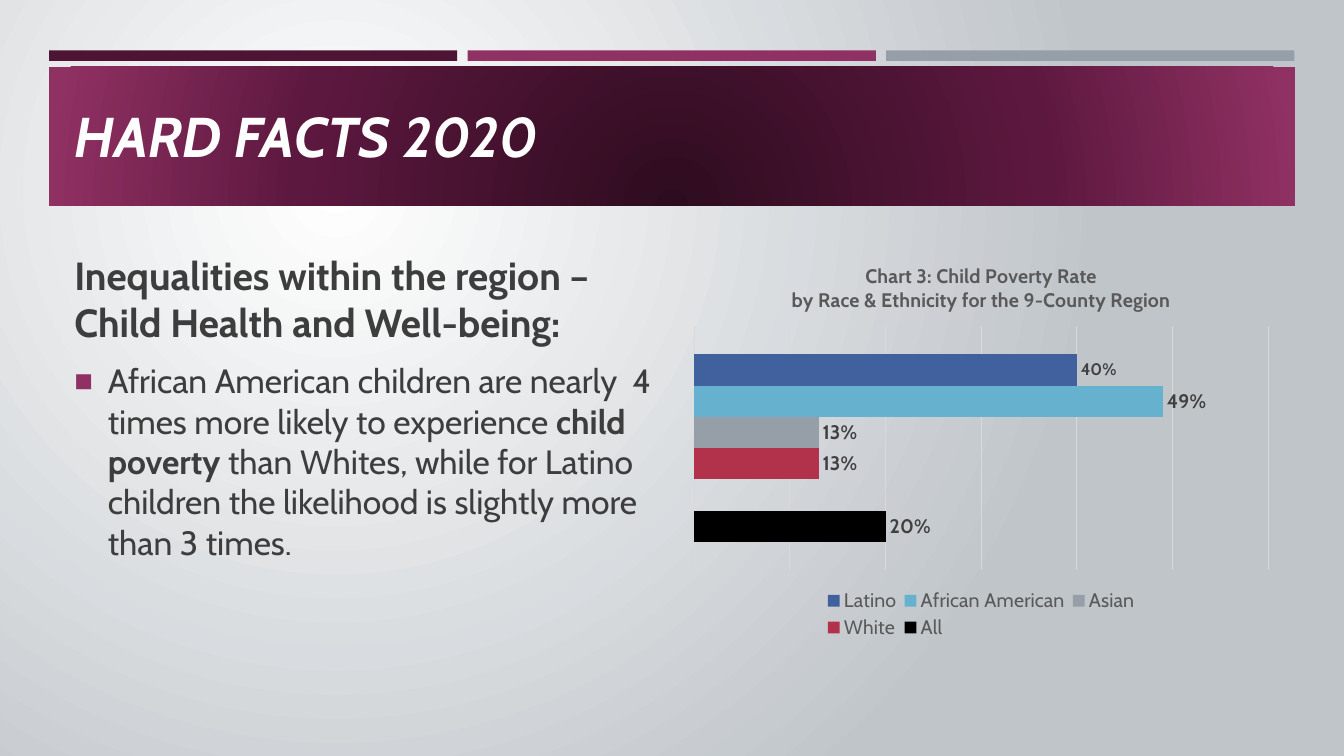
from lxml import etree
from pptx import Presentation
from pptx.chart.data import CategoryChartData
from pptx.dml.color import RGBColor
from pptx.enum.chart import XL_CHART_TYPE, XL_LABEL_POSITION, XL_LEGEND_POSITION
from pptx.enum.shapes import MSO_SHAPE
from pptx.enum.text import MSO_ANCHOR
from pptx.oxml import parse_xml
from pptx.oxml.ns import nsdecls, qn
from pptx.util import Pt

FONT = "Cabin"
BODY_COLOR, CHART_GRAY = "3D3D3D", "595959"
PLUM, DARK_PLUM, GRAY = "903163", "4D1434", "969FA7"

# Series from bottom bar to top bar: name, value, colour, label size
POVERTY_RATES = [
    ("All", 0.20, "000000", 14),
    ("Series 2", None, PLUM, None),
    ("White", 0.13, "B2324B", 14),
    ("Asian", 0.13, GRAY, 14),
    ("African American", 0.49, "66B1CE", 14),
    ("Latino", 0.40, "40619D", 12),
]


def rgb(color):
    return RGBColor.from_string(color)


def set_font(font, size, color, bold=False, italic=False):
    formats = {"name": FONT, "size": Pt(size), "bold": bold, "italic": italic}
    for attribute, value in formats.items():
        setattr(font, attribute, value)
    font.color.rgb = rgb(color)


def set_radial_gradient(fill, owner, stops, focus):
    """Spread the stops in circles around the focus (left, top, right, bottom)."""
    fill.gradient()
    gradient = next(owner.iter(qn("a:gradFill")))
    for child in list(gradient):
        gradient.remove(child)
    stop_list = etree.SubElement(gradient, qn("a:gsLst"))
    for position, color in stops:
        stop = etree.SubElement(stop_list, qn("a:gs"), pos=str(position * 1000))
        etree.SubElement(stop, qn("a:srgbClr"), val=color)
    circle = etree.SubElement(gradient, qn("a:path"), path="circle")
    sides = {side: str(percent * 1000) for side, percent in zip("ltrb", focus)}
    etree.SubElement(circle, qn("a:fillToRect"), **sides)


def add_bar(slide, left, top, width, height, color):
    bar = slide.shapes.add_shape(
        MSO_SHAPE.RECTANGLE, Pt(left), Pt(top), Pt(width), Pt(height))
    bar.shadow.inherit = False
    bar.line.fill.background()
    bar.fill.solid()
    bar.fill.fore_color.rgb = rgb(color)
    return bar


def add_text_frame(slide, left, top, width, height, anchor):
    frame = slide.shapes.add_textbox(
        Pt(left), Pt(top), Pt(width), Pt(height)).text_frame
    frame.word_wrap = True
    frame.vertical_anchor = anchor
    return frame


def add_run(paragraph, text, size, color, **style):
    run = paragraph.add_run()
    run.text = text
    set_font(run.font, size, color, **style)


def set_square_bullet(paragraph, indent):
    properties = paragraph._p.get_or_add_pPr()
    properties.set("marL", str(Pt(indent)))
    properties.set("indent", str(-Pt(indent)))
    bullet_color = etree.SubElement(properties, qn("a:buClr"))
    etree.SubElement(bullet_color, qn("a:srgbClr"), val=PLUM)
    etree.SubElement(properties, qn("a:buSzPct"), val="92000")
    etree.SubElement(properties, qn("a:buFont"), typeface="Arial")
    etree.SubElement(properties, qn("a:buChar"), char="■")


def manual_layout(x, y, w, h, inner=False):
    target = '<c:layoutTarget val="inner"/>' if inner else ""
    return parse_xml(
        f'<c:layout {nsdecls("c")}><c:manualLayout>{target}'
        '<c:xMode val="edge"/><c:yMode val="edge"/>'
        f'<c:x val="{x}"/><c:y val="{y}"/><c:w val="{w}"/><c:h val="{h}"/>'
        '</c:manualLayout></c:layout>')


def add_legend(chart):
    chart.has_legend = True
    chart.legend.position = XL_LEGEND_POSITION.BOTTOM
    chart.legend.include_in_layout = False
    set_font(chart.legend.font, 14, CHART_GRAY)
    legend = chart.legend._element
    for old_layout in legend.findall(qn("c:layout")):
        legend.remove(old_layout)
    # Leave the empty series out of the legend
    hidden_entry = parse_xml(
        f'<c:legendEntry {nsdecls("c")}><c:idx val="4"/>'
        '<c:delete val="1"/></c:legendEntry>')
    position = legend.find(qn("c:legendPos"))
    position.addnext(hidden_entry)
    hidden_entry.addnext(manual_layout(0.23, 0.85, 0.54, 0.14))


def add_poverty_chart(slide, left, top, width, height):
    data = CategoryChartData(number_format="0%")
    data.categories = ["1"]
    for name, rate, _, _ in POVERTY_RATES:
        data.add_series(name, [rate])
    chart = slide.shapes.add_chart(
        XL_CHART_TYPE.BAR_CLUSTERED, Pt(left), Pt(top), Pt(width), Pt(height),
        data).chart
    set_font(chart.font, 10, "000000")

    # Title
    chart.has_title = True
    title = chart.chart_title.text_frame
    lines = ["Chart 3: Child Poverty Rate",
             "by Race & Ethnicity for the 9-County Region"]
    for number, line in enumerate(lines):
        paragraph = title.add_paragraph() if number else title.paragraphs[0]
        add_run(paragraph, line, 14, CHART_GRAY, bold=True)

    # Axes and grid
    chart.category_axis.visible = False
    chart.category_axis.has_major_gridlines = False
    rate_axis = chart.value_axis
    rate_axis.visible = False
    rate_axis.minimum_scale, rate_axis.maximum_scale = 0, 0.6
    rate_axis.major_unit = 0.1
    rate_axis.has_major_gridlines = True
    grid = rate_axis.major_gridlines.format.line
    grid.color.rgb = rgb("D9D9D9")
    grid.width = Pt(0.75)

    # Bars and their labels
    plot = chart.plots[0]
    plot.gap_width, plot.overlap = 182, 0
    plot.vary_by_categories = False
    for series, (_, _, color, label_size) in zip(plot.series, POVERTY_RATES):
        series.format.fill.solid()
        series.format.fill.fore_color.rgb = rgb(color)
        if label_size:
            labels = series.data_labels
            formats = {"show_value": True, "number_format": "0%",
                       "number_format_is_linked": False,
                       "position": XL_LABEL_POSITION.OUTSIDE_END}
            for attribute, value in formats.items():
                setattr(labels, attribute, value)
            set_font(labels.font, label_size, "404040", bold=True)

    add_legend(chart)
    plot_area = next(chart._chartSpace.iter(qn("c:plotArea")))
    for old_layout in plot_area.findall(qn("c:layout")):
        plot_area.remove(old_layout)
    plot_area.insert(0, manual_layout(0.02, 0.2, 0.96, 0.61, inner=True))


def main():
    deck = Presentation()
    deck.slide_width, deck.slide_height = Pt(960), Pt(540)
    slide = deck.slides.add_slide(deck.slide_layouts[6])
    set_radial_gradient(slide.background.fill, slide.element,
                        [(0, "FFFFFF"), (100, "C0C5CA")], (50, 50, 100, 100))

    # Three strips above the banner
    for column, color in enumerate([DARK_PLUM, PLUM, GRAY]):
        add_bar(slide, 35 + column * 299, 36, 291.6, 7.5, color)

    # Title banner
    banner = add_bar(slide, 35, 47.7, 890, 99.4, PLUM)
    set_radial_gradient(banner.fill, banner._element,
                        [(0, "2E0C1F"), (60, "5D183F"), (100, PLUM)],
                        (50, 130, 50, -30))
    heading = add_text_frame(slide, 46, 57.6, 868, 78, MSO_ANCHOR.MIDDLE)
    add_run(heading.paragraphs[0], "HARD FACTS 2020", 40, "FFFFFF",
            bold=True, italic=True)

    # Findings
    findings = add_text_frame(slide, 46, 175.7, 427, 286, MSO_ANCHOR.TOP)
    topic = findings.paragraphs[0]
    topic.space_after = Pt(6)
    add_run(topic, "Inequalities within the region – Child Health and Well-being:",
            28, BODY_COLOR, bold=True)
    finding = findings.add_paragraph()
    finding.space_before, finding.space_after = Pt(4.8), Pt(6)
    set_square_bullet(finding, 24)
    for text, bold in [
        ("African American children are nearly  4 times more likely to experience ",
         False),
        ("child poverty ", True),
        ("than Whites, while for Latino children the likelihood is slightly more "
         "than 3 times.", False),
    ]:
        add_run(finding, text, 24, BODY_COLOR, bold=bold)

    add_poverty_chart(slide, 487.4, 175.7, 427, 286)
    deck.save("out.pptx")


if __name__ == "__main__":
    main()
